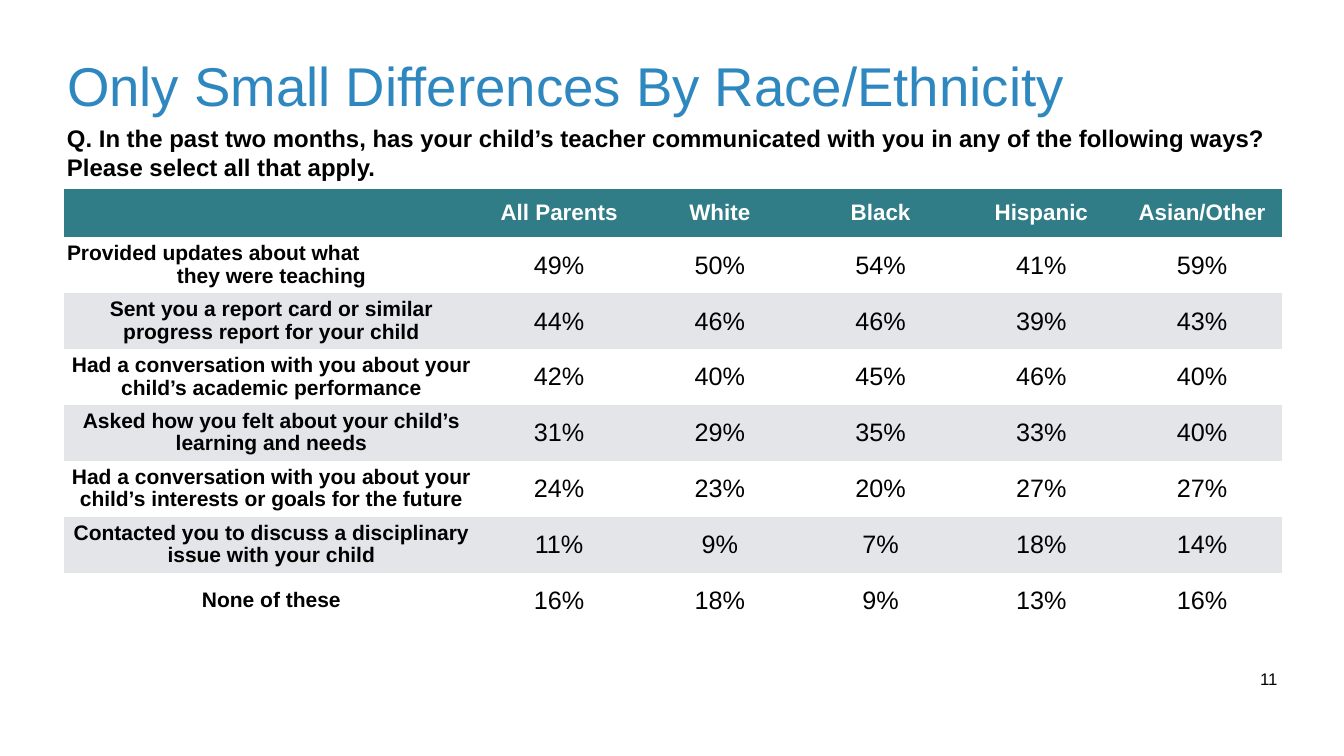
from pptx import Presentation
from pptx.dml.color import RGBColor
from pptx.enum import text
from pptx.util import Inches, Pt

TITLE = "Only Small Differences By Race/Ethnicity"
QUESTION = ("Q. In the past two months, has your child’s teacher communicated with you "
            "in any of the following ways? Please select all that apply.")
PAGE = "11"
GROUPS = ["", "All Parents", "White", "Black", "Hispanic", "Asian/Other"]
ANSWERS = [
    ("Provided updates about what\nthey were teaching", 49, 50, 54, 41, 59),
    ("Sent you a report card or similar progress report for your child", 44, 46, 46, 39, 43),
    ("Had a conversation with you about your child’s academic performance", 42, 40, 45, 46, 40),
    ("Asked how you felt about your child’s learning and needs", 31, 29, 35, 33, 40),
    ("Had a conversation with you about your child’s interests or goals for the future",
     24, 23, 20, 27, 27),
    ("Contacted you to discuss a disciplinary issue with your child", 11, 9, 7, 18, 14),
    ("None of these", 16, 18, 9, 13, 16),
]

THEME = {
    "font": "Arial",
    "title": "2E88BF", "ink": "000000", "header": "317D87", "header_ink": "FFFFFF",
    "bands": ("FFFFFF", "E3E5E8"),
    "title_pt": 78, "question_pt": 34.2, "header_pt": 32, "answer_pt": 30,
    "value_pt": 36, "page_pt": 24,
}
NO_GRID_STYLE = "{2D5ABB26-0587-4C30-8999-92F81FD0307C}"
LEFT, WIDTH = 1.25, 24.17
TABLE_LEFT, TABLE_TOP = 1.27, 3.74
ANSWER_WIDTH, VALUE_WIDTH = 8.23, 3.19
HEADER_HEIGHT, ROW_HEIGHT = 0.97, 1.11
CENTER, START = text.PP_ALIGN.CENTER, text.PP_ALIGN.LEFT
MIDDLE, TOP = text.MSO_ANCHOR.MIDDLE, text.MSO_ANCHOR.TOP


def format_paragraph(paragraph, size, color="ink", bold=False, align=START):
    paragraph.alignment = align
    font = paragraph.font
    font.name, font.size, font.bold = THEME["font"], Pt(size), bold
    font.color.rgb = RGBColor.from_string(THEME[color])


def set_margins(target, side):
    target.margin_left = target.margin_right = Inches(side)
    target.margin_top = target.margin_bottom = Inches(side)


def fill_box(box, words, anchor, wrap=True, **look):
    frame = box.text_frame
    frame.text = words
    frame.word_wrap = wrap
    frame.auto_size = text.MSO_AUTO_SIZE.NONE
    frame.vertical_anchor = anchor
    set_margins(frame, 0.08)
    format_paragraph(frame.paragraphs[0], **look)


def fill_cell(cell, words, fill, **look):
    cell.fill.solid()
    cell.fill.fore_color.rgb = RGBColor.from_string(fill)
    cell.vertical_anchor = MIDDLE
    set_margins(cell, 0.06)
    cell.text_frame.text = words
    for paragraph in cell.text_frame.paragraphs:
        format_paragraph(paragraph, align=CENTER, **look)


def add_title(slide):
    title = slide.shapes.title
    title.left, title.top = Inches(LEFT), Inches(0.84)
    title.width, title.height = Inches(WIDTH), Inches(2.08)
    fill_box(title, TITLE, TOP, size=THEME["title_pt"], color="title")
    title.text_frame.margin_top = Inches(0.18)


def add_answers(slide):
    frame = slide.shapes.add_table(
        len(ANSWERS) + 1, len(GROUPS), Inches(TABLE_LEFT), Inches(TABLE_TOP), Inches(WIDTH),
        Inches(HEADER_HEIGHT + ROW_HEIGHT * len(ANSWERS)))
    table = frame.table
    table.horz_banding = False
    table._tbl.tblPr.find("{*}tableStyleId").text = NO_GRID_STYLE
    for index, column in enumerate(table.columns):
        column.width = Inches(VALUE_WIDTH if index else ANSWER_WIDTH)
    for index, row in enumerate(table.rows):
        row.height = Inches(ROW_HEIGHT if index else HEADER_HEIGHT)

    for index, group in enumerate(GROUPS):
        fill_cell(table.cell(0, index), group, THEME["header"],
                  size=THEME["header_pt"], color="header_ink", bold=True)
    for row, (answer, *values) in enumerate(ANSWERS, 1):
        band = THEME["bands"][(row - 1) % 2]
        answer_cell = table.cell(row, 0)
        fill_cell(answer_cell, answer, band, size=THEME["answer_pt"], bold=True)
        for paragraph in answer_cell.text_frame.paragraphs:
            paragraph.line_spacing = 0.95
        for column, value in enumerate(values, 1):
            fill_cell(table.cell(row, column), f"{value}%", band, size=THEME["value_pt"])
    table.cell(1, 0).text_frame.paragraphs[0].alignment = START


def main():
    deck = Presentation()
    deck.slide_width, deck.slide_height = Inches(26.67), Inches(15)
    slide = deck.slides.add_slide(deck.slide_layouts[5])
    add_title(slide)
    page = slide.shapes.add_textbox(Inches(24.96), Inches(13.19), Inches(0.44), Inches(0.56))
    fill_box(page, PAGE, TOP, wrap=False, size=THEME["page_pt"], align=CENTER)
    question = slide.shapes.add_textbox(Inches(LEFT), Inches(2.37), Inches(WIDTH), Inches(1.31))
    fill_box(question, QUESTION, MIDDLE, size=THEME["question_pt"], bold=True)
    add_answers(slide)
    deck.save("out.pptx")


if __name__ == "__main__":
    main()
